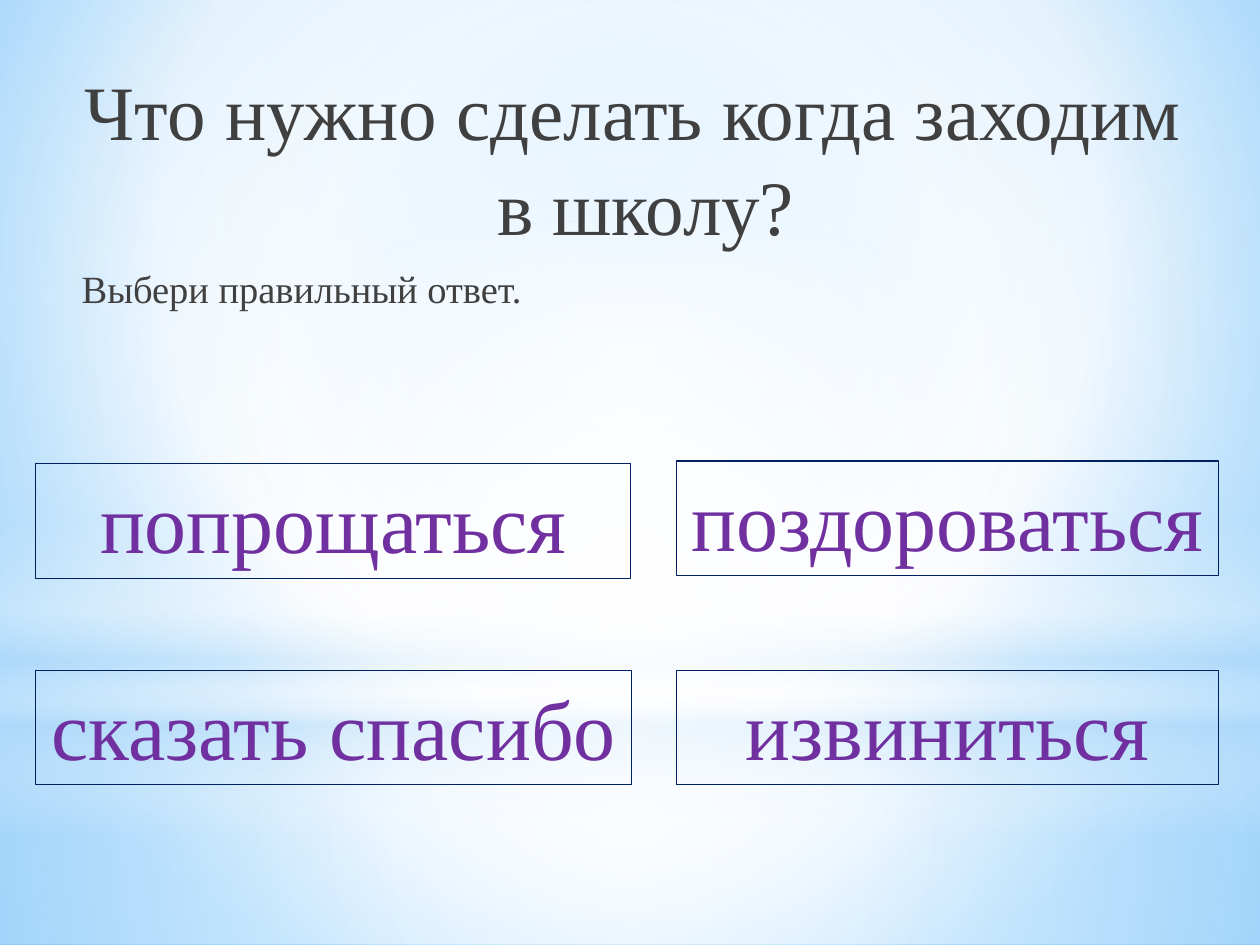
"""Build a quiz slide with a question and four framed answers on a soft blue background."""
from lxml.etree import SubElement
from pptx import Presentation
from pptx.dml.color import RGBColor
from pptx.enum.shapes import MSO_SHAPE
from pptx.enum.text import MSO_ANCHOR, PP_ALIGN
from pptx.oxml.ns import qn
from pptx.util import Pt


def rgb(value):
    return RGBColor.from_string(value)


def set_gradient(element, fill, stops, to=None):
    fill.gradient()
    grad = element.find(".//" + qn("a:gradFill"))
    for child in list(grad):
        grad.remove(child)
    gs_list = SubElement(grad, qn("a:gsLst"))
    for pos, color, alpha in stops:
        gs = SubElement(gs_list, qn("a:gs"), pos=str(pos * 1000))
        clr = SubElement(gs, qn("a:srgbClr"), val=color)
        if alpha < 100:
            SubElement(clr, qn("a:alpha"), val=str(alpha * 1000))
    if to:
        path = SubElement(grad, qn("a:path"), path="circle")
        sides = {side: str(v * 1000) for side, v in zip("ltrb", to)}
        SubElement(path, qn("a:fillToRect"), **sides)
    else:
        SubElement(grad, qn("a:lin"), ang="5400000", scaled="0")


prs = Presentation()
prs.slide_width, prs.slide_height = Pt(720), Pt(540)
s = prs.slides.add_slide(prs.slide_layouts[6])
set_gradient(s.element, s.background.fill,
             [(0, "9ED5FF", 100), (60, "FFFFFF", 100), (100, "5BB9FF", 100)],
             (20, 10, 20, 60))

WHITE, SKY = "FFFFFF", "B4DCFA"
CENTER = (50, 50, 50, 50)
layers = [
    (MSO_SHAPE.RECTANGLE, 402, 138, CENTER,
     [(0, WHITE, 91), (37, WHITE, 76), (100, SKY, 79)]),
    (MSO_SHAPE.RECTANGLE, 0, 402, CENTER,
     [(0, WHITE, 89), (48, WHITE, 62), (100, SKY, 79)]),
    (MSO_SHAPE.RECTANGLE, 297, 180, None,
     [(0, WHITE, 0), (29, WHITE, 30), (45, SKY, 40),
      (55, WHITE, 26), (65, SKY, 60), (100, WHITE, 0)]),
    (MSO_SHAPE.OVAL, 126, 402, CENTER, [(0, WHITE, 100), (56, WHITE, 0)]),
]
for kind, top, height, to, stops in layers:
    sp = s.shapes.add_shape(kind, 0, Pt(top), Pt(720), Pt(height))
    sp.shadow.inherit = False
    sp.line.fill.background()
    set_gradient(sp.element, sp.fill, stops, to)

tf = s.shapes.add_textbox(Pt(36), Pt(28), Pt(648), Pt(146)).text_frame
tf.word_wrap = True
tf.margin_top = Pt(6.5)
question = [
    ("Что нужно сделать когда заходим в школу?", 44, PP_ALIGN.CENTER, 0),
    ("Выбери правильный ответ.", 22, PP_ALIGN.LEFT, 4.4),
]
for i, (text, size, align, before) in enumerate(question):
    p = tf.add_paragraph() if i else tf.paragraphs[0]
    p.text = text
    p.alignment = align
    p.line_spacing = 1.03
    p.space_before, p.space_after = Pt(before), Pt(3)
    pPr = p._p.get_or_add_pPr()
    pPr.set("marL", str(Pt(18)))
    pPr.set("indent", str(Pt(-14.4)))
    p.font.name, p.font.size = "Times New Roman", Pt(size)
    p.font.color.rgb = rgb("404040")

answers = [
    ("попрощаться", 20.5, 265, 340, True),
    ("поздороваться", 386.5, 263.5, 310, False),
    ("сказать спасибо", 20.5, 383, 340.5, False),
    ("извиниться", 386.5, 383, 310, True),
]
for text, left, top, width, wrap in answers:
    sp = s.shapes.add_shape(MSO_SHAPE.RECTANGLE, Pt(left), Pt(top), Pt(width), Pt(65.5))
    sp.shadow.inherit = False
    sp.fill.background()
    sp.line.color.rgb = rgb("002060")
    sp.line.width = Pt(0.75)
    tf = sp.text_frame
    tf.word_wrap = wrap
    tf.vertical_anchor = MSO_ANCHOR.TOP
    p = tf.paragraphs[0]
    p.text = text
    p.alignment = PP_ALIGN.CENTER
    p.font.name, p.font.size = "Times New Roman", Pt(48)
    p.font.color.rgb = rgb("7030A0")
    font = sp.element.find(".//" + qn("a:defRPr"))
    ln = SubElement(font, qn("a:ln"), w=str(Pt(0.75)))
    SubElement(SubElement(ln, qn("a:solidFill")), qn("a:srgbClr"), val="000000")
    font.insert(0, ln)

prs.save("out.pptx")
